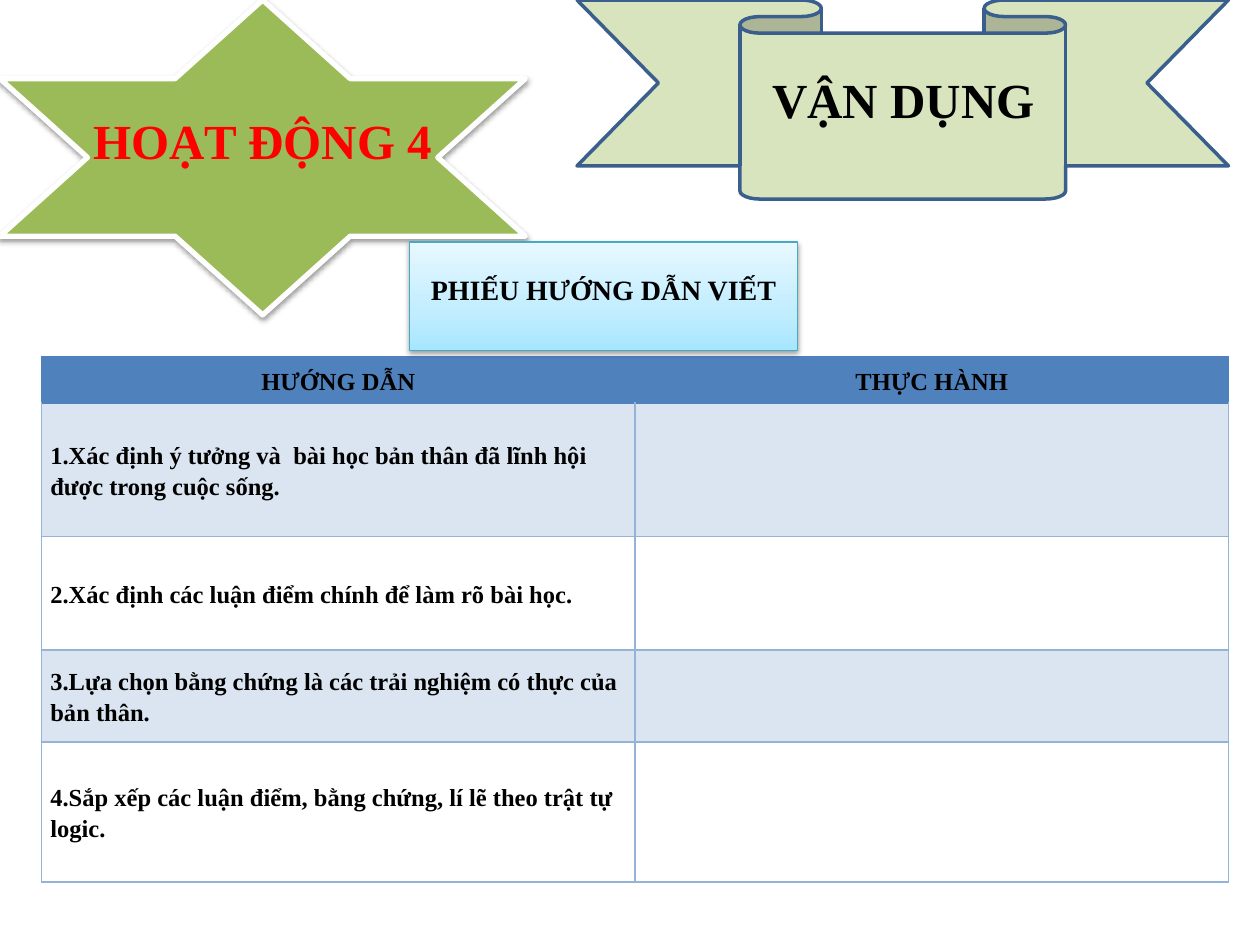
from lxml.etree import SubElement
from pptx import Presentation
from pptx.dml.color import RGBColor
from pptx.enum.shapes import MSO_SHAPE as Preset
from pptx.enum.text import MSO_ANCHOR as Anchor, MSO_AUTO_SIZE as AutoSize, PP_ALIGN as Align
from pptx.oxml import parse_xml
from pptx.oxml.ns import nsdecls, qn
from pptx.util import Inches, Pt

# Content
ACTIVITY = "HOẠT ĐỘNG 4"
TITLE = "VẬN DỤNG"
SHEET_NAME = "PHIẾU HƯỚNG DẪN VIẾT"
HEADINGS = ("HƯỚNG DẪN", "THỰC HÀNH")
GUIDES = [  # text, row height
    ("1.Xác định ý tưởng và  bài học bản thân đã lĩnh hội được trong cuộc sống.", 1.06),
    ("2.Xác định các luận điểm chính để làm rõ bài học.", 0.9),
    ("3.Lựa chọn bằng chứng là các trải nghiệm có thực của bản thân.", 0.73),
    ("4.Sắp xếp các luận điểm, bằng chứng, lí lẽ theo trật tự logic.", 1.11),
]
HEADER_HEIGHT = 0.37
COLUMN_WIDTH = 4.71

# Look
FONT = "Times New Roman"
BLACK = RGBColor(0x00, 0x00, 0x00)
WHITE = RGBColor(0xFF, 0xFF, 0xFF)
RED = RGBColor(0xFF, 0x00, 0x00)
STAR_GREEN = RGBColor(0x9B, 0xBB, 0x59)
RIBBON_GREEN = RGBColor(0xD7, 0xE4, 0xBD)
RIBBON_EDGE = RGBColor(0x3A, 0x5F, 0x8C)
LABEL_EDGE = RGBColor(0x46, 0xAA, 0xC5)
HEADER_BLUE = RGBColor(0x4F, 0x81, 0xBD)
BAND_BLUE = RGBColor(0xDB, 0xE5, 0xF1)
GRID_BLUE = RGBColor(0x95, 0xB3, 0xD7)
LABEL_STOPS = [(0, "A7E6FF"), (35, "C1EDFF"), (100, "E7F8FF")]


def write(frame, text, size, color=BLACK, align=Align.CENTER):
    frame.text = text
    frame.word_wrap = True
    paragraph = frame.paragraphs[0]
    paragraph.alignment = align
    font = paragraph.font
    font.name, font.size, font.bold = FONT, Pt(size), True
    font.color.rgb = color
    return paragraph


def add_figure(preset, box, fill, edge, edge_width):
    figure = slide.shapes.add_shape(preset, *map(Inches, box))
    figure.shadow.inherit = False
    if fill:
        figure.fill.solid()
        figure.fill.fore_color.rgb = fill
    figure.line.color.rgb = edge
    figure.line.width = Pt(edge_width)
    return figure


def add_drop_shadow(figure):
    effects = figure.element.spPr.find(qn("a:effectLst"))
    shadow = SubElement(effects, qn("a:outerShdw"), blurRad=str(Pt(3.1)),
                        dist=str(Pt(1.6)), dir="5400000", rotWithShape="0")
    color = SubElement(shadow, qn("a:srgbClr"), val="000000")
    SubElement(color, qn("a:alpha"), val="38000")


def fill_gradient(figure, stops):
    marks = "".join(f'<a:gs pos="{position * 1000}"><a:srgbClr val="{color}"/></a:gs>'
                    for position, color in stops)
    gradient = parse_xml(f'<a:gradFill {nsdecls("a")}><a:gsLst>{marks}</a:gsLst>'
                         '<a:lin ang="16200000" scaled="0"/></a:gradFill>')
    figure.element.spPr.find(qn("a:prstGeom")).addnext(gradient)


def set_borders(cell, colors):
    properties = cell._tc.get_or_add_tcPr()
    for index, (side, color) in enumerate(zip("LRTB", colors)):
        paint = (f'<a:solidFill><a:srgbClr val="{color}"/></a:solidFill>'
                 if color else "<a:noFill/>")
        properties.insert(index, parse_xml(
            f'<a:ln{side} {nsdecls("a")} w="{Pt(1)}">{paint}</a:ln{side}>'))


deck = Presentation()
deck.slide_width, deck.slide_height = Inches(10), Inches(7.5)
slide = deck.slides.add_slide(deck.slide_layouts[5])

# Activity star
star = add_figure(Preset.STAR_6_POINT, (0, 0, 4.17, 2.5), STAR_GREEN, WHITE, 3)
add_drop_shadow(star)
activity = slide.shapes.add_textbox(*map(Inches, (0.5, 0.83, 3.17, 0.57)))
write(activity.text_frame, ACTIVITY, 28, RED)

# Title on its ribbon
ribbon = add_figure(Preset.DOWN_RIBBON, (4.58, 0, 5.17, 1.58), RIBBON_GREEN, RIBBON_EDGE, 2)
title = slide.shapes.title
title.left, title.top, title.width, title.height = map(Inches, (5.92, 0.5, 2.5, 0.57))
write(title.text_frame, TITLE, 28)
title.text_frame.auto_size = AutoSize.NONE
ribbon.element.addnext(title.element)

# Guide table
heights = [HEADER_HEIGHT] + [height for _, height in GUIDES]
rows = [HEADINGS] + [(guide, "") for guide, _ in GUIDES]
table = slide.shapes.add_table(
    len(rows), len(HEADINGS), Inches(0.33), Inches(2.83),
    Inches(COLUMN_WIDTH * len(HEADINGS)), Inches(sum(heights))).table
for column in table.columns:
    column.width = Inches(COLUMN_WIDTH)
for r, (texts, height) in enumerate(zip(rows, heights)):
    table.rows[r].height = Inches(height)
    for c, text in enumerate(texts):
        cell = table.cell(r, c)
        cell.vertical_anchor = Anchor.MIDDLE
        cell.margin_left = cell.margin_right = Inches(0.07)
        cell.margin_top = cell.margin_bottom = 0
        cell.fill.solid()
        cell.fill.fore_color.rgb = HEADER_BLUE if r == 0 else BAND_BLUE if r % 2 else WHITE
        if text:
            paragraph = write(cell.text_frame, text, 14,
                              align=Align.LEFT if r else Align.CENTER)
            paragraph.line_spacing = 1.15
            paragraph.space_after = Pt(6)
        if r == 0:
            set_borders(cell, (None if c else HEADER_BLUE, HEADER_BLUE if c else None,
                               HEADER_BLUE, HEADER_BLUE))
        else:
            set_borders(cell, (GRID_BLUE, GRID_BLUE,
                               HEADER_BLUE if r == 1 else GRID_BLUE, GRID_BLUE))

# Sheet label
label = add_figure(Preset.RECTANGLE, (3.25, 1.92, 3.08, 0.86), None, LABEL_EDGE, 0.75)
fill_gradient(label, LABEL_STOPS)
add_drop_shadow(label)
write(label.text_frame, SHEET_NAME, 16)
label.text_frame.vertical_anchor = Anchor.MIDDLE
label.text_frame.margin_bottom = Inches(0.16)

deck.save("out.pptx")
